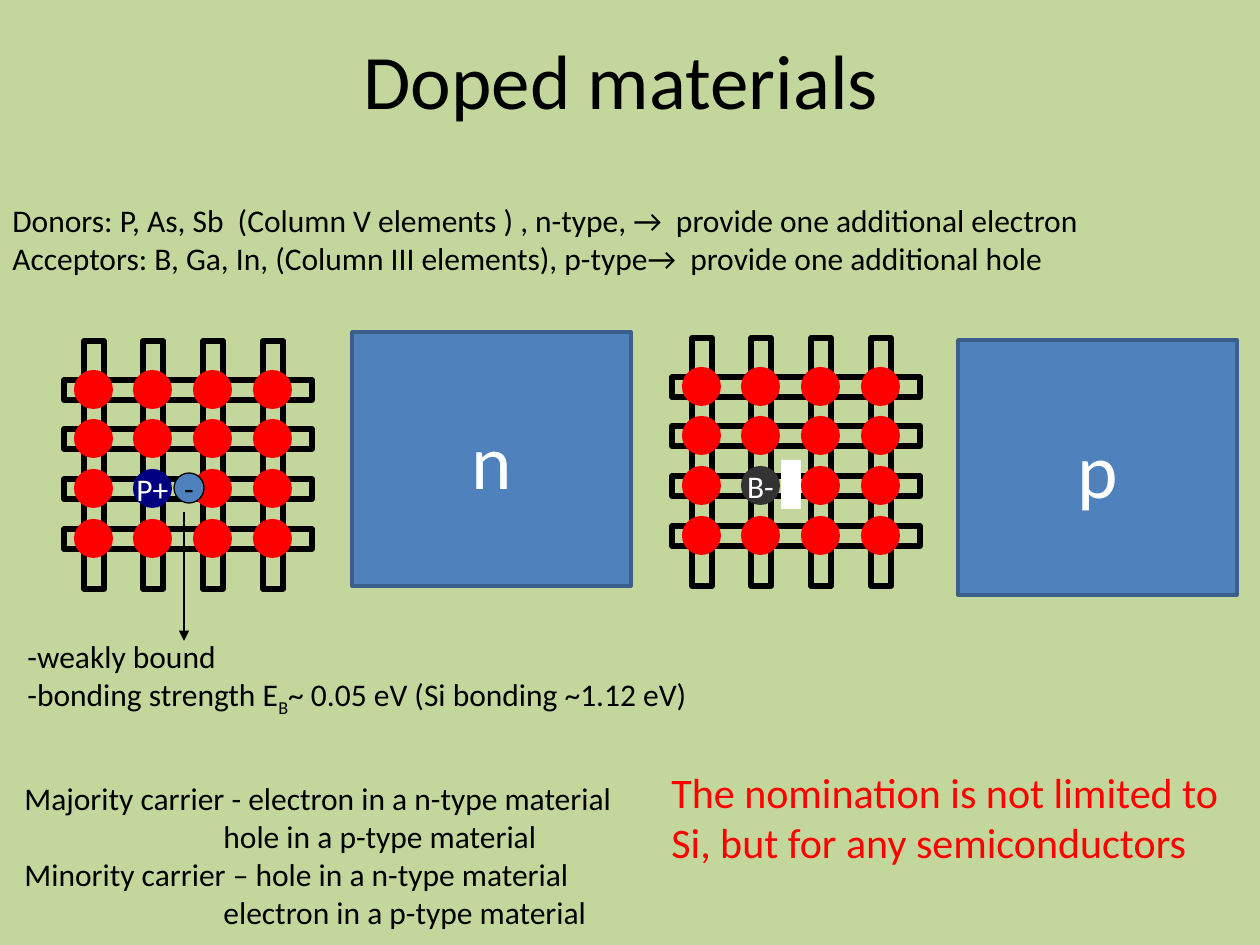
from itertools import product

from lxml import etree
from pptx import Presentation
from pptx import util as u
from pptx.dml.color import RGBColor
from pptx.enum import shapes, text
from pptx.oxml import ns

# Colours
BLACK = RGBColor(0x00, 0x00, 0x00)
WHITE = RGBColor(0xFF, 0xFF, 0xFF)
RED = RGBColor(0xFF, 0x00, 0x00)
NAVY = RGBColor(0x00, 0x00, 0x80)
GREY = RGBColor(0x33, 0x33, 0x33)
BLUE = RGBColor(0x4F, 0x81, 0xBD)
EDGE = RGBColor(0x3A, 0x5F, 0x8C)
GREEN = RGBColor(0xC3, 0xD6, 0x9B)

SCALE = 914400 / 126  # EMU in one px
RECT = shapes.MSO_SHAPE.RECTANGLE
OVAL = shapes.MSO_SHAPE.OVAL
MID = text.MSO_ANCHOR.MIDDLE
FIT = text.MSO_AUTO_SIZE.SHAPE_TO_FIT_TEXT

# Lattice: four bars each way, with atoms where they cross
COUNT = 4
BAR, THICK, ATOM = 248, 20, 39
COLS = [i * 179 // 3 for i in range(COUNT)]
ROWS = [i * 149 // 3 for i in range(COUNT)]
DOPED = (2, 1)  # row and column of the foreign atom


def px(*nums):
    return [u.Emu(round(n * SCALE)) for n in nums]


def apply(item, form):
    for name, value in form.items():
        setattr(item, name, value)


def style(font, size, color):
    apply(font, {"name": "Calibri", "size": u.Pt(size)})
    font.color.rgb = color


def label(shape, words, size, color, wrap=True):
    frame = shape.text_frame
    apply(frame, {"text": words, "word_wrap": wrap, "vertical_anchor": MID})
    para = frame.paragraphs[0]
    para.alignment = text.PP_ALIGN.CENTER
    style(para.font, size, color)


def draw(host, kind, box, fill=None, line=None, width=1):
    shape = host.add_shape(kind, *px(*box))
    shape.shadow.inherit = False
    if fill is None:
        shape.fill.background()
    else:
        shape.fill.solid()
        shape.fill.fore_color.rgb = fill
    if line is None:
        shape.line.fill.background()
    else:
        shape.line.color.rgb = line
        shape.line.width = u.Pt(width)
    return shape


def note(host, box, lines, size=18, color=BLACK):
    """Each line is (text, indent in px); text between _ marks is subscript."""
    frame = host.add_textbox(*px(*box)).text_frame
    apply(frame, {"word_wrap": False, "auto_size": FIT})
    for i, (words, indent) in enumerate(lines):
        para = frame.add_paragraph() if i else frame.paragraphs[0]
        if indent:
            para._p.get_or_add_pPr().set("marL", str(px(indent)[0]))
        for j, part in enumerate(words.split("_")):
            run = para.add_run()
            run.text = part
            style(run.font, size, color)
            if j % 2:
                run._r.get_or_add_rPr().set("baseline", "-25000")


def bars(host, left, top):
    for dy in ROWS:
        draw(host, RECT, (left, top + dy, BAR, THICK), line=BLACK, width=3)
    for dx in COLS:
        box = (left - 94 + dx, top + 75, BAR, THICK)
        draw(host, RECT, box, line=BLACK, width=3).rotation = 90


def atoms(host, left, top, name, color):
    for row, col in product(range(COUNT), repeat=2):
        alien = (row, col) == DOPED
        box = (left + 10 + COLS[col], top - 10 + ROWS[row], ATOM, ATOM)
        ball = draw(host, OVAL, box, color if alien else RED)
        if alien:
            label(ball, name, 18, WHITE, False)


def arrow(host, start, end):
    line = host.add_connector(shapes.MSO_CONNECTOR.STRAIGHT, *px(*start, *end))
    line.line.color.rgb = BLACK
    line.line.width = u.Pt(0.75)
    tip = etree.SubElement(line.line._get_or_add_ln(), ns.qn("a:tailEnd"))
    tip.set("type", "triangle")
    etree.SubElement(line._element.spPr, ns.qn("a:effectLst"))


def panel(host, box, name):
    label(draw(host, RECT, box, BLUE, EDGE, 2), name, 44, WHITE)


def main():
    deck = Presentation()
    deck.slide_width, deck.slide_height = px(1260, 945)
    slide = deck.slides.add_slide(deck.slide_layouts[5])
    slide.background.fill.solid()
    slide.background.fill.fore_color.rgb = GREEN
    host = slide.shapes

    # Title and dopant kinds
    title = host.title
    apply(title, dict(zip(("left", "top", "width", "height"), px(54, 0, 1134, 158))))
    label(title, "Doped materials", 44, BLACK)
    note(host, (0, 195, 1206, 88), [
        ("Donors: P, As, Sb  (Column V elements ) , n-type, →  provide one additional electron", 0),
        ("Acceptors: B, Ga, In, (Column III elements), p-type→  provide one additional hole", 0),
    ])

    # Donor lattice with its loose electron
    bars(host.add_group_shape().shapes, 64, 380)
    atoms(host, 64, 380, "P+", NAVY)
    free = draw(host, OVAL, (174, 473, 30, 30), BLUE, BLACK, 0.75)
    label(free, "-", 18, BLACK, False)

    # Acceptor lattice with its hole
    group = host.add_group_shape().shapes
    bars(group, 672, 377)
    atoms(group, 672, 377, "B-", GREY)
    draw(group, RECT, (781, 460, 20, 49), WHITE)

    # Binding of the electron
    arrow(host, (184, 512), (184, 641))
    note(host, (15, 631, 764, 126), [
        ("-weakly bound", 0),
        ("-bonding strength E_B_~ 0.05 eV (Si bonding ~1.12 eV)", 0),
    ])

    # Carriers
    note(host, (12, 773, 626, 165), [
        ("Majority carrier - electron in a n-type material", 0),
        ("hole in a p-type material", 199),
        ("Minority carrier – hole in a n-type material", 0),
        ("electron in a p-type material", 199),
    ])

    # Material blocks and closing remark
    panel(host, (352, 332, 279, 254), "n")
    panel(host, (958, 340, 279, 255), "p")
    note(host, (659, 760, 577, 115), [
        ("The nomination is not limited to", 0),
        ("Si, but for any semiconductors", 0),
    ], 24, RED)

    deck.save("out.pptx")


if __name__ == "__main__":
    main()
